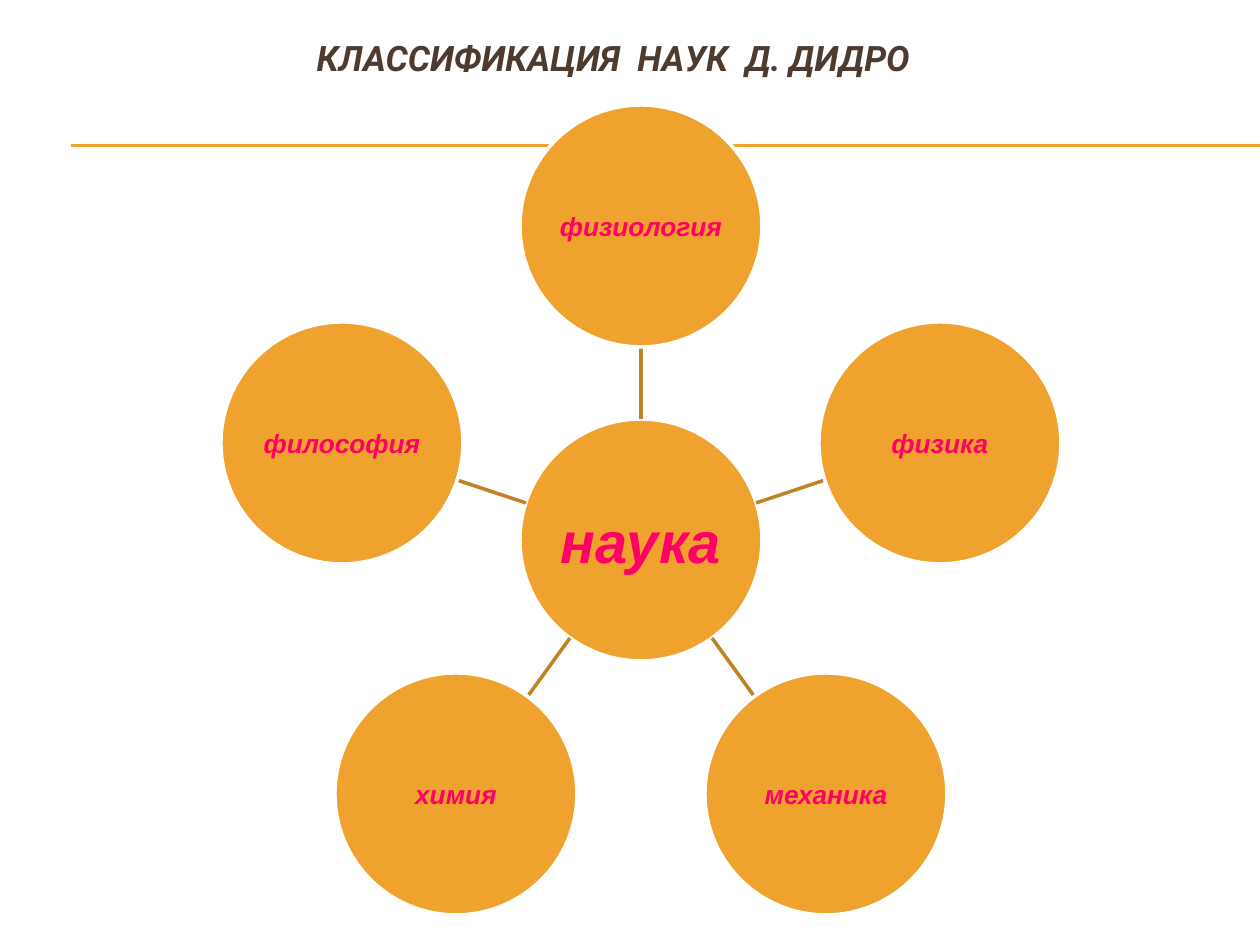
from math import cos, radians, sin

from lxml.etree import SubElement
from pptx import Presentation
from pptx.dml.color import RGBColor
from pptx.enum.shapes import MSO_CONNECTOR, MSO_SHAPE
from pptx.enum.text import MSO_ANCHOR, PP_ALIGN
from pptx.oxml.ns import qn
from pptx.util import Emu, Pt

COLORS = {"title": "4E3B30", "circle": "F0A22E", "outline": "FFFFFF",
          "spoke": "C08225", "label": "FF0066"}
SCIENCES = ["физиология", "физика", "механика", "химия", "философия"]
HUB_X, HUB_Y = 641, 540
RING = 314
RADIUS = 121


def px(n):
    """Turn pixels at 126 to the inch into EMU."""
    return Emu(round(n * 914400 / 126))


def rgb(name):
    return RGBColor.from_string(COLORS[name])


def write(tf, text, size, font, color, inset=0, wrap=False):
    """Put one centred bold italic line into a text frame."""
    frame = {"word_wrap": wrap, "vertical_anchor": MSO_ANCHOR.MIDDLE}
    frame |= {f"margin_{side}": px(inset) for side in ("left", "top", "right", "bottom")}
    for name, value in frame.items():
        setattr(tf, name, value)
    p = tf.paragraphs[0]
    p.alignment = PP_ALIGN.CENTER
    r = p.add_run()
    r.text = text
    style = {"size": Pt(size), "name": font, "bold": True, "italic": True}
    for name, value in style.items():
        setattr(r.font, name, value)
    r.font.color.rgb = rgb(color)


def add_title(s, text):
    sp = s.shapes.title
    box = {"left": px(15), "top": px(0), "width": px(1197), "height": px(116)}
    for name, value in box.items():
        setattr(sp, name, value)
    write(sp.text_frame, text, 20, "Roboto", "title", inset=6, wrap=True)


def add_line(s, start, end, color, width):
    ln = s.shapes.add_connector(MSO_CONNECTOR.STRAIGHT, *map(px, start + end))
    ln.line.color.rgb = rgb(color)
    ln.line.width = Pt(width)
    SubElement(ln._element.spPr, qn("a:effectLst"))


def add_circle(s, center, text, size):
    x, y = center
    sp = s.shapes.add_shape(MSO_SHAPE.OVAL, px(x - RADIUS), px(y - RADIUS),
                            px(2 * RADIUS), px(2 * RADIUS))
    sp.shadow.inherit = False
    sp.fill.solid()
    sp.fill.fore_color.rgb = rgb("circle")
    sp.line.color.rgb = rgb("outline")
    sp.line.width = Pt(2)
    write(sp.text_frame, text, size, "Arial", "label")


def around_hub(angle, distance):
    """Point at a clockwise angle from the top of the hub."""
    a = radians(angle)
    return round(HUB_X + distance * sin(a)), round(HUB_Y - distance * cos(a))


def main():
    prs = Presentation()
    prs.slide_width, prs.slide_height = px(1260), px(945)
    s = prs.slides.add_slide(prs.slide_layouts[5])
    add_title(s, "КЛАССИФИКАЦИЯ  НАУК  Д. ДИДРО")
    for y in (145, 146):
        add_line(s, (71, y), (1260, y), "circle", 0.75)
    add_circle(s, (HUB_X, HUB_Y), "наука", 33)
    for i, science in enumerate(SCIENCES):
        angle = i * 360 / len(SCIENCES)
        add_line(s, around_hub(angle, RADIUS), around_hub(angle, RING - RADIUS), "spoke", 2)
        add_circle(s, around_hub(angle, RING), science, 15)
    prs.save("out.pptx")


if __name__ == "__main__":
    main()
